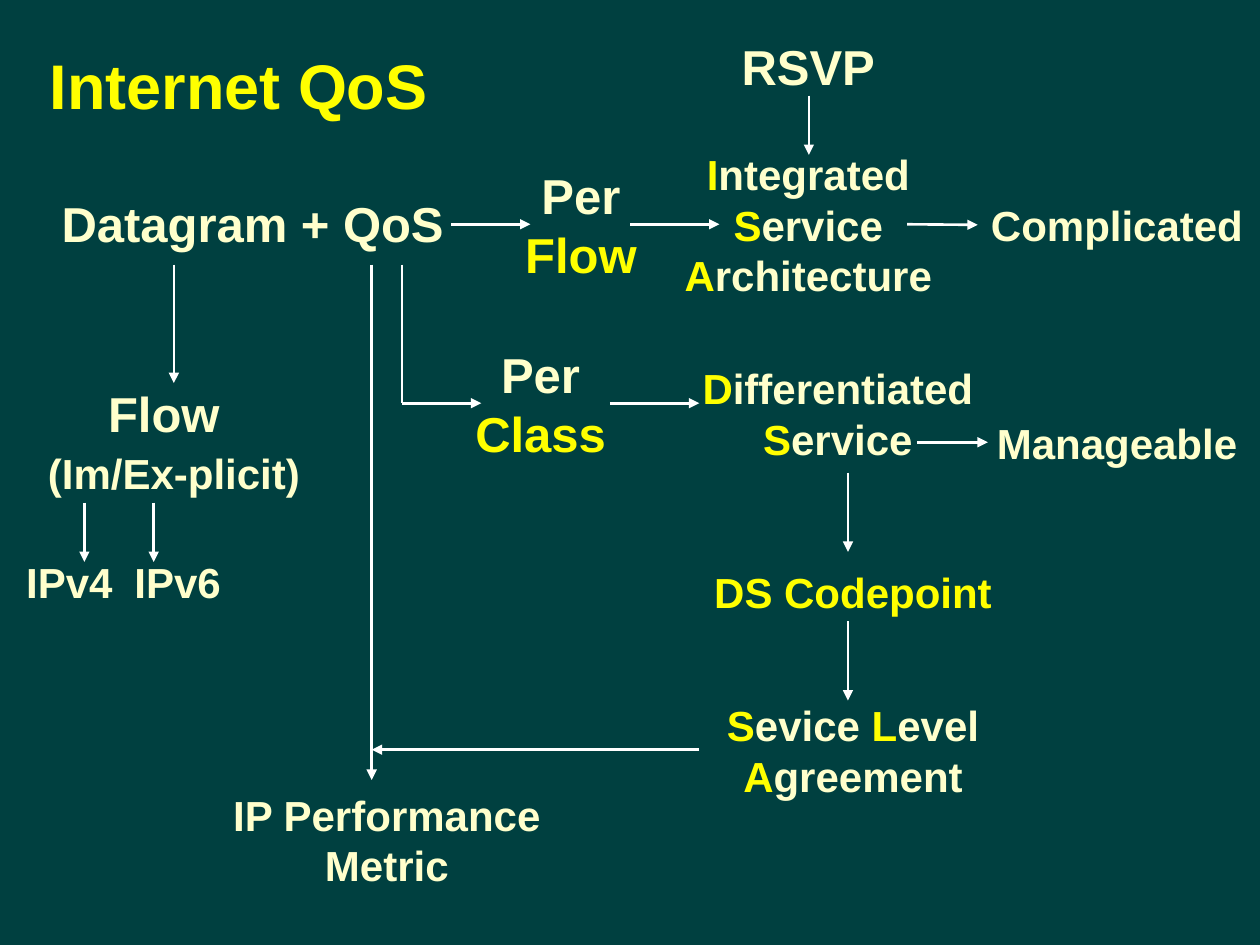
from lxml import etree
from pptx import Presentation
from pptx import util as u
from pptx.dml.color import RGBColor
from pptx.enum import shapes, text
from pptx.oxml.ns import qn

TEAL = RGBColor(0x00, 0x40, 0x40)
CREAM = RGBColor(0xFF, 0xFF, 0xCC)
YELLOW = RGBColor(0xFF, 0xFF, 0x00)
WHITE = RGBColor(0xFF, 0xFF, 0xFF)

deck = Presentation()
deck.slide_width, deck.slide_height = u.Inches(10), u.Inches(7.5)
slide = deck.slides.add_slide(deck.slide_layouts[6])
slide.background.fill.solid()
slide.background.fill.fore_color.rgb = TEAL

# Grid of 100 columns by 75 rows
COL = deck.slide_width / 100
ROW = deck.slide_height / 75


def add_label(words, left, top, width, height, size=24, color=CREAM):
    """Centred label; parts between asterisks are highlighted."""
    label = slide.shapes.add_textbox(
        round(left * COL), round(top * ROW), round(width * COL), round(height * ROW))
    frame = label.text_frame
    frame.word_wrap = True
    frame.vertical_anchor = text.MSO_ANCHOR.MIDDLE
    line = frame.paragraphs[0]
    line.alignment = text.PP_ALIGN.CENTER
    for i, part in enumerate(words.split("*")):
        if part:
            run = line.add_run()
            run.text = part
            run.font.name, run.font.size, run.font.bold = "Arial", u.Pt(size), True
            run.font.color.rgb = YELLOW if i % 2 else color
    return label


def add_arrow(x1, y1, x2, y2, head=True):
    arrow = slide.shapes.add_connector(
        shapes.MSO_CONNECTOR.STRAIGHT,
        round(x1 * COL), round(y1 * ROW), round(x2 * COL), round(y2 * ROW))
    arrow.line.color.rgb = WHITE
    arrow.line.width = u.Pt(1.5)
    if head:
        etree.SubElement(arrow.line._get_or_add_ln(), qn("a:tailEnd"), type="triangle")
    etree.SubElement(arrow._element.spPr, qn("a:effectLst"))
    return arrow


# Title and starting point
add_label("Internet QoS", 2, 2.1, 33.9, 9.2, size=36, color=YELLOW)
add_label("Datagram + QoS", 3.5, 13.1, 33.1, 9.2, size=28)

# Flow branch, down to the IP versions
add_label("Flow", 5.9, 28.8, 14.2, 7.9, size=28)
add_label("(Im/Ex-plicit)", 1.2, 33.6, 25.2, 7.9)
add_arrow(13.8, 21, 13.8, 30.4)
for version, left, arrow_x in (("IPv4", 0.4, 6.7), ("IPv6", 9, 12.2)):
    add_label(version, left, 42.2, 10.2, 7.9)
    add_arrow(arrow_x, 39.9, arrow_x, 44.6)

# Per-flow branch
FLOW_ROW = 17.8
add_label("Per *Flow*", 39, 12.3, 14.2, 11, size=28)
add_label("*I*ntegrated *S*ervice *A*rchitecture", 53.1, 11.5, 22.1, 12.6)
add_label("RSVP", 56.3, 2.1, 15.7, 6.3, size=28)
complicated = add_label("Complicated", 77.6, 13.1, 22.1, 9.5)
add_arrow(35.8, FLOW_ROW, 42.1, FLOW_ROW)
add_arrow(50, FLOW_ROW, 57.1, FLOW_ROW)
add_arrow(72, FLOW_ROW, 77.6, FLOW_ROW).end_connect(complicated, 1)
add_arrow(64.2, 7.6, 64.2, 12.3)

# Per-class branch
CLASS_ROW = 32
add_label("Per *Class*", 35.8, 26.5, 14.2, 11, size=28)
add_label("*D*ifferentiated *S*ervice", 54.7, 26.5, 23.6, 12.6)
add_label("Manageable", 77.6, 30.4, 22.1, 9.5)
add_arrow(31.9, 21, 31.9, CLASS_ROW, head=False)
add_arrow(31.9, CLASS_ROW, 38.2, CLASS_ROW)
add_arrow(48.4, CLASS_ROW, 55.5, CLASS_ROW)
add_arrow(72.8, 35.1, 78.4, 35.1)

# From differentiated service down to the agreement
add_label("*DS Codepoint*", 54.7, 43, 26, 7.9)
add_label("*S*evice *L*evel *A*greement", 54.7, 55.6, 26, 7.9)
for top in (37.5, 49.3):
    add_arrow(67.3, top, 67.3, top + 6.3)

# Performance metric, fed by QoS and the agreement
METRIC_X = 29.5
add_label("IP Performance Metric", 15.3, 62.7, 30.8, 7.9)
add_arrow(METRIC_X, 21, METRIC_X, 61.9)
add_arrow(55.5, 59.5, METRIC_X, 59.5)

deck.save("out.pptx")
